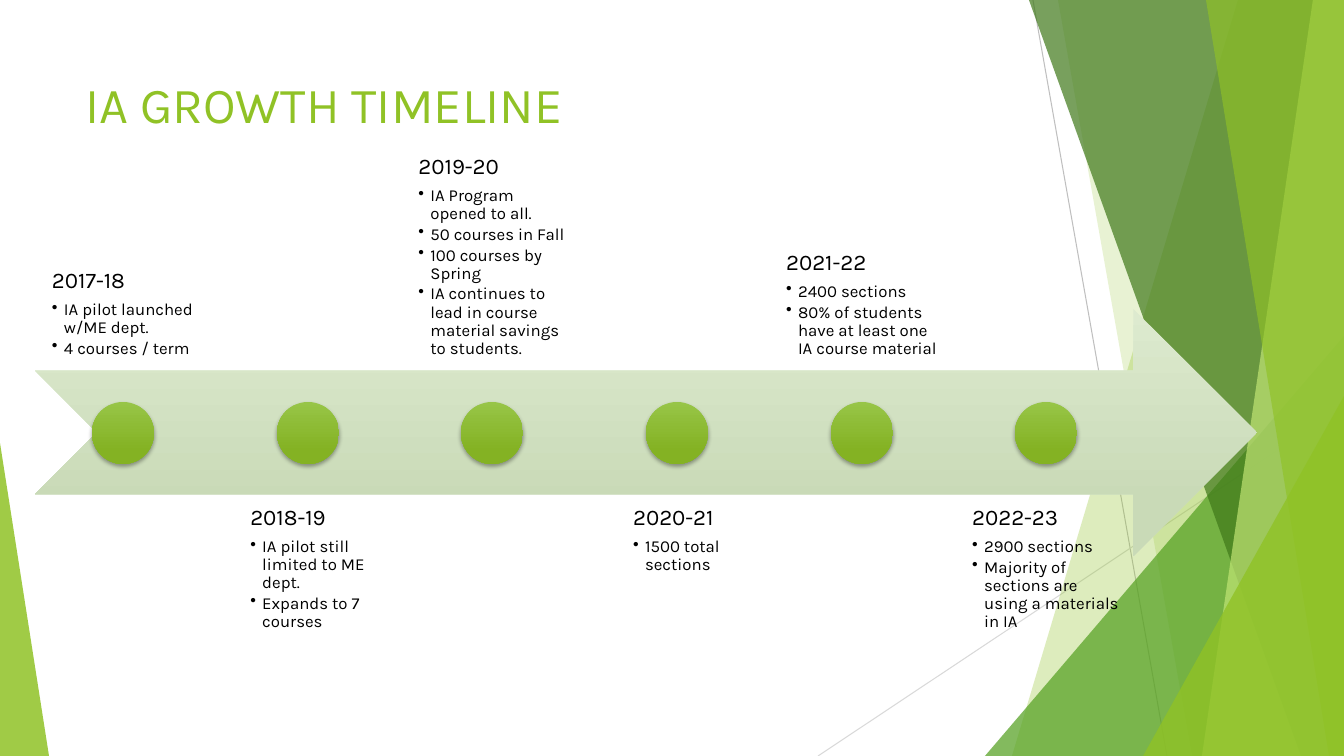
from lxml import etree
from pptx import Presentation
from pptx.dml.color import RGBColor
from pptx.enum.shapes import MSO_CONNECTOR, MSO_SHAPE
from pptx.enum.text import MSO_ANCHOR, MSO_AUTO_SIZE, PP_ALIGN
from pptx.oxml.ns import qn
from pptx.util import Pt

WIDE, HIGH = 1344, 756
UNIT = 12192000 / WIDE
LINE = MSO_CONNECTOR.STRAIGHT
TRI, DOT, ARROW = (MSO_SHAPE.ISOSCELES_TRIANGLE, MSO_SHAPE.OVAL,
                   MSO_SHAPE.NOTCHED_RIGHT_ARROW)
TOP, MID, LOW = MSO_ANCHOR.TOP, MSO_ANCHOR.MIDDLE, MSO_ANCHOR.BOTTOM
LEFT, FIXED = PP_ALIGN.LEFT, MSO_AUTO_SIZE.NONE
FONT, GREEN, BLACK = "Karla", "90C226", "000000"

RAYS = [((1033, 0), (1167, 756), "BFBFBF"), ((1344, 406), (818, 756), "D9D9D9")]
# top x, bottom x, colour, opacity
BACK = [(1238, 1012, GREEN, 30), (1058, 1192, GREEN, 20)]
FRONT = [(1029, 1301, "3F7819", 70), (1313, 1202, "C0E474", 70),
         (1206, 1329, GREEN, 65)]
YEARS = [
    ("2017-18", ["IA pilot launched w/ME dept.", "4 courses / term"]),
    ("2018-19", ["IA pilot still limited to ME dept.", "Expands to 7 courses"]),
    ("2019-20", ["IA Program opened to all.", "50 courses in Fall",
                 "100 courses by Spring",
                 "IA continues to lead in course material savings to students."]),
    ("2020-21", ["1500 total sections"]),
    ("2021-22", ["2400 sections",
                 "80% of students have at least one IA course material"]),
    ("2022-23", ["2900 sections",
                 "Majority of sections are using a materials in IA"]),
]


def px(*nums):
    return [round(n * UNIT) for n in nums]


def tint(code):
    return RGBColor.from_string(code)


def assign(item, values):
    for name, value in values.items():
        setattr(item, name, value)


def sub(node, tag, **attrs):
    return etree.SubElement(node, qn(tag), attrs)


def glass(shape, code, alpha):
    """Give a shape a see-through fill without line or shadow."""
    shape.shadow.inherit = False
    shape.line.fill.background()
    shape.fill.solid()
    shape.fill.fore_color.rgb = tint(code)
    color = shape.fill._xPr.find(qn("a:solidFill"))[0]
    sub(color, "a:alpha", val=str(alpha * 1000))


def fade(shape, start, end):
    """Give a shape a downward gradient that ends at 78 %."""
    shape.shadow.inherit = False
    shape.line.fill.background()
    shape.fill.gradient()
    shape.fill.gradient_angle = 270
    for stop, code, place in zip(shape.fill.gradient_stops, (start, end), (0, 0.78)):
        stop.color.rgb = tint(code)
        stop.position = place


def facet(shapes, top, base, code, alpha):
    """Draw a pane that runs from a slanted left edge to the right margin."""
    form = shapes.build_freeform(top, 0, scale=UNIT)
    form.add_line_segments([(WIDE, 0), (WIDE, HIGH), (base, HIGH)], close=True)
    glass(form.convert_to_shape(), code, alpha)


def wedge(shapes, box, side, code, alpha):
    shape = shapes.add_shape(TRI, *px(*box))
    shape.adjustments[0] = side
    glass(shape, code, alpha)


def decor(shapes):
    for start, end, code in RAYS:
        ray = shapes.add_connector(LINE, *px(*start, *end))
        assign(ray.line, {"width": Pt(0.75)})
        ray.line.color.rgb = tint(code)
        sub(ray._element.spPr, "a:effectLst")
    for pane in BACK:
        facet(shapes, *pane)
    wedge(shapes, (985, 336, 359, 420), 1, "54A021", 72)
    for pane in FRONT:
        facet(shapes, *pane)
    wedge(shapes, (1143, 396, 201, 360), 1, GREEN, 80)
    wedge(shapes, (0, 443, 49, 313), 0, GREEN, 85)


def write(para, text, size, code):
    run = para.add_run()
    run.text = text
    assign(run.font, {"name": FONT, "size": Pt(size)})
    run.font.color.rgb = tint(code)


def heading(title, box, text):
    assign(title, dict(zip(("left", "top", "width", "height"), px(*box))))
    frame = title.text_frame
    assign(frame, {"auto_size": FIXED, "vertical_anchor": TOP, "word_wrap": True})
    para = frame.paragraphs[0]
    para.alignment = LEFT
    write(para, text, 36, GREEN)


def note(shapes, box, anchor, year, points):
    """Set a year and its bullets as a block centred across the box."""
    frame = shapes.add_textbox(*px(*box)).text_frame
    gap = px(12)[0]
    assign(frame, {"word_wrap": True, "vertical_anchor": anchor,
                   "margin_left": gap, "margin_right": gap,
                   "margin_top": gap, "margin_bottom": gap})
    frame._txBody.bodyPr.set("anchorCtr", "1")
    para = frame.paragraphs[0]
    assign(para, {"line_spacing": 0.9, "space_after": Pt(5.6), "alignment": LEFT})
    write(para, year, 16, BLACK)
    for point in points:
        para = frame.add_paragraph()
        assign(para, {"line_spacing": 0.9, "space_after": Pt(1.8),
                      "alignment": LEFT, "level": 1})
        props = para._p.get_or_add_pPr()
        props.set("marL", str(gap))
        props.set("indent", str(-gap))
        sub(props, "a:buChar", char="•")
        write(para, point, 12, BLACK)


def marker(shapes, box):
    dot = shapes.add_shape(DOT, *px(*box))
    fade(dot, "97C547", "84B223")
    effects = dot._element.spPr.find(qn("a:effectLst"))
    shade = sub(effects, "a:outerShdw", blurRad=str(Pt(3)), dist=str(Pt(2)),
                dir="5400000", rotWithShape="0")
    sub(sub(shade, "a:srgbClr", val=BLACK), "a:alpha", val="35000")


def timeline(shapes, box):
    """Draw the arrow with notes set above and below it in turn."""
    left, top, width, high = box
    fade(shapes.add_shape(ARROW, *px(*box)), "DDEACF", "C9DAB7")
    wide, step, size = 175, 184.7, 62
    for i, (year, points) in enumerate(YEARS):
        x = round(left + i * step)
        above = i % 2 == 0
        y = top + high * (-3 if above else 3) // 4
        note(shapes, (x, y, wide, high), LOW if above else TOP, year, points)
        marker(shapes, (x + (wide - size) // 2 + 1, top + (high - size) // 2 + 1,
                        size, size))


def main():
    deck = Presentation()
    deck.slide_width, deck.slide_height = px(WIDE, HIGH)
    slide = deck.slides.add_slide(deck.slide_layouts[5])
    decor(slide.shapes)
    heading(slide.shapes.title, (75, 68, 948, 87), "IA GROWTH TIMELINE")
    timeline(slide.shapes, (35, 309, 1222, 247))
    deck.save("out.pptx")


if __name__ == "__main__":
    main()
